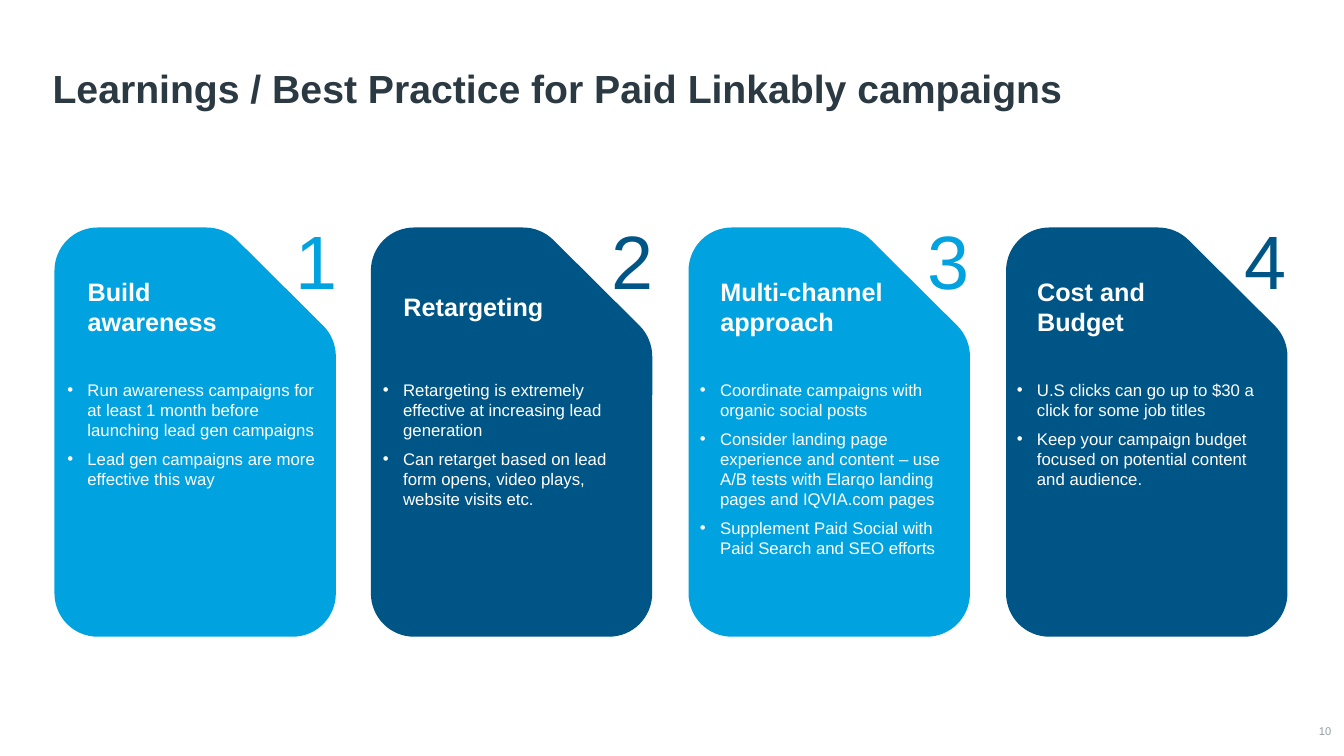
from lxml import etree
from pptx import Presentation
from pptx.dml.color import RGBColor
from pptx.enum.text import MSO_ANCHOR, MSO_AUTO_SIZE, PP_ALIGN
from pptx.oxml.ns import qn
from pptx.util import Pt

TOP, MID, LOW = MSO_ANCHOR.TOP, MSO_ANCHOR.MIDDLE, MSO_ANCHOR.BOTTOM
LEFT, MID_X, RIGHT = PP_ALIGN.LEFT, PP_ALIGN.CENTER, PP_ALIGN.RIGHT
GROW, FIXED = MSO_AUTO_SIZE.SHAPE_TO_FIT_TEXT, MSO_AUTO_SIZE.NONE

SKY, NAVY, WHITE, INK, GREY = "00A3E0", "005587", "FFFFFF", "2B3A42", "959CA0"

EDGE = [
    [(31, 0)],
    [(13.8, 0), (0, 13.8), (0, 31)],
    [(0, 261.2)],
    [(0, 278.5), (13.8, 292.3), (31, 292.3)],
    [(170, 292.3)],
    [(187.2, 292.3), (201, 278.5), (201, 261.2)],
    [(201, 92)],
    [(201, 84), (197.8, 76), (192, 70.2)],
    [(130.4, 9)],
    [(124.6, 3.2), (116.7, 0), (108.4, 0)],
]

CARDS = [
    (38.9, "Build awareness", SKY, [
        "Run awareness campaigns for at least 1 month before launching lead gen campaigns",
        "Lead gen campaigns are more effective this way"]),
    (264.9, "Retargeting", NAVY, [
        "Retargeting is extremely effective at increasing lead generation",
        "Can retarget based on lead form opens, video plays, website visits etc."]),
    (491.8, "Multi-channel approach", SKY, [
        "Coordinate campaigns with organic social posts",
        "Consider landing page experience and content – use A/B tests with Elarqo landing "
        "pages and IQVIA.com pages",
        "Supplement Paid Social with Paid Search and SEO efforts"]),
    (718.6, "Cost and Budget", NAVY, [
        "U.S clicks can go up to $30 a click for some job titles",
        "Keep your campaign budget focused on potential content and audience."]),
]


def color(code):
    return RGBColor.from_string(code)


class Deck:
    """Hold the style and the current slide."""

    font = "Arial"

    def __init__(self, slide):
        self.shapes = slide.shapes

    def card(self, left, top, fill):
        """Draw a rounded card with its top right corner cut."""
        ends = [(Pt(left + x), Pt(top + y)) for x, y in (part[-1] for part in EDGE)]
        pen = self.shapes.build_freeform(*ends[-1], scale=1.0)
        pen.add_line_segments(ends, close=True)
        shape = pen.convert_to_shape()
        sides = list(shape._element.iter(qn("a:lnTo")))
        for side, part in zip(sides, EDGE):
            if len(part) == 3:
                self.curve(side, part)
        shape.shadow.inherit = False
        shape.fill.solid()
        shape.fill.fore_color.rgb = color(fill)
        shape.line.fill.background()

    def curve(self, side, nodes):
        """Turn a straight side into a cubic curve."""
        bend = etree.Element(qn("a:cubicBezTo"))
        for x, y in nodes:
            node = etree.SubElement(bend, qn("a:pt"))
            node.set("x", str(Pt(x)))
            node.set("y", str(Pt(y)))
        side.getparent().replace(side, bend)

    def text(self, box, lines, size, ink, bold=False, align=LEFT, anchor=TOP,
             wrap=True, fit=FIXED, pad=(7.2, 3.6), lead=None, bullet=False):
        """Add a text box with one paragraph for each line."""
        frame = self.shapes.add_textbox(*map(Pt, box)).text_frame
        style = {"word_wrap": wrap, "auto_size": fit, "vertical_anchor": anchor,
                 "margin_left": Pt(pad[0]), "margin_right": Pt(pad[0]),
                 "margin_top": Pt(pad[1]), "margin_bottom": Pt(pad[1])}
        for name, value in style.items():
            setattr(frame, name, value)
        for rank, line in enumerate(lines):
            para = frame.add_paragraph() if rank else frame.paragraphs[0]
            if bullet:
                self.bullet(para)
            if rank:
                para.space_before = Pt(6)
            para.alignment = align
            para.line_spacing = lead
            run = para.add_run()
            run.text = line
            for name, value in {"name": self.font, "size": Pt(size), "bold": bold}.items():
                setattr(run.font, name, value)
            run.font.color.rgb = color(ink)

    def bullet(self, para):
        """Give a paragraph a round bullet with a hanging indent."""
        props = para._p.get_or_add_pPr()
        for name, value in {"marL": 14.4, "indent": -14.4}.items():
            props.set(name, str(Pt(value)))
        etree.SubElement(props, qn("a:buFont")).set("typeface", self.font)
        etree.SubElement(props, qn("a:buChar")).set("char", "•")


def main():
    """Build the slide and save it."""
    prs = Presentation()
    prs.slide_width, prs.slide_height = Pt(960), Pt(540)
    deck = Deck(prs.slides.add_slide(prs.slide_layouts[6]))
    deck.text((923, 515.5, 28.1, 13.7), ["10"], 8, GREY, align=RIGHT, anchor=MID, pad=(0, 0))
    deck.text((30.5, 23, 892.8, 60.5), ["Learnings / Best Practice for Paid Linkably campaigns"],
              28, INK, bold=True, anchor=LOW, lead=0.9)
    for rank, (left, head, fill, notes) in enumerate(CARDS):
        inset = left + 2.1 - 0.5 * rank
        deck.card(left, 162.5, fill)
        deck.text((203.7 + 225.9 * rank, 149, 44.6, 72.7), [str(rank + 1)], 54, fill,
                  align=MID_X, wrap=False, fit=GROW)
        deck.text((inset, 267.8, 197.3, 179.3), notes, 12, WHITE, bullet=True)
        deck.text((inset + 14.6, 182.9, 148.3, 72), [head], 18, WHITE, bold=True, anchor=MID)
    prs.save("out.pptx")


if __name__ == "__main__":
    main()
